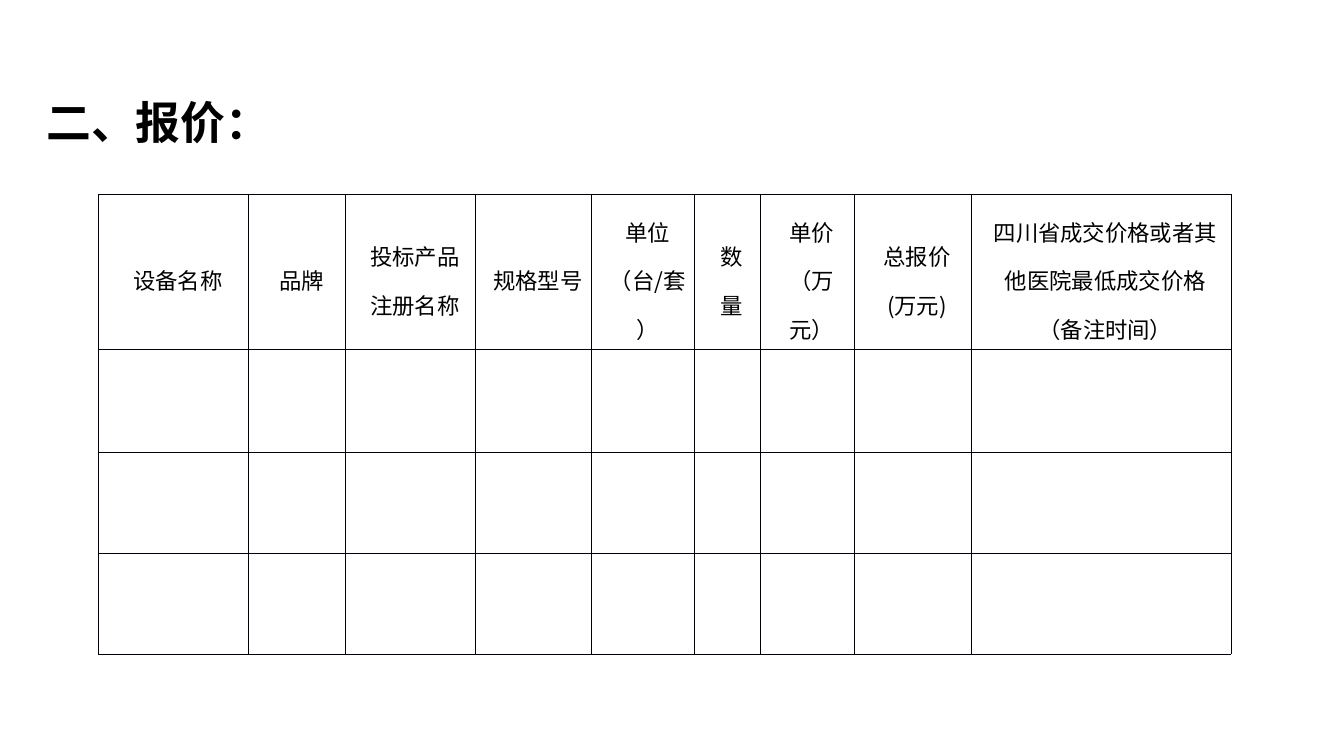
"""Build the quotation slide: a heading above an empty price table."""
import pptx
import pptx.util
import pptx.dml.color
import pptx.enum.text
import pptx.oxml
import pptx.oxml.ns
import lxml.etree

Inches, Pt = pptx.util.Inches, pptx.util.Pt
qn = pptx.oxml.ns.qn
BLACK = pptx.dml.color.RGBColor(0x00, 0x00, 0x00)
BORDER = pptx.dml.color.RGBColor(0x00, 0x00, 0x08)
FONT = "Noto Sans CJK SC"


def add_text(p, text, size, bold):
    r = p.add_run()
    r.text = text
    for name, value in {"name": FONT, "size": Pt(size), "bold": bold}.items():
        setattr(r.font, name, value)
    r.font.color.rgb = BLACK
    lxml.etree.SubElement(r.font._element, qn("a:ea"), typeface=FONT)


def add_borders(cell):
    tcPr = cell._tc.get_or_add_tcPr()
    for i, side in enumerate(("lnL", "lnR", "lnT", "lnB")):
        ln = lxml.etree.Element(qn(f"a:{side}"), w=str(Pt(0.5)))
        fill = lxml.etree.SubElement(ln, qn("a:solidFill"))
        lxml.etree.SubElement(fill, qn("a:srgbClr"), val=str(BORDER))
        tcPr.insert(i, ln)


prs = pptx.Presentation()
prs.slide_width, prs.slide_height = Inches(13.33), Inches(7.5)
s = prs.slides.add_slide(prs.slide_layouts[6])

sp = s.shapes.add_textbox(Inches(0.36), Inches(0.89), Inches(7.41), Inches(0.64))
tf = sp.text_frame
tf.word_wrap = True
tf.auto_size = pptx.enum.text.MSO_AUTO_SIZE.SHAPE_TO_FIT_TEXT
add_text(tf.paragraphs[0], "二、报价：", 32, True)

columns = [
    ("设备名称", 1.48),
    ("品牌", 0.97),
    ("投标产品注册名称", 1.28),
    ("规格型号", 1.16),
    ("单位（台/套）", 1.02),
    ("数量", 0.65),
    ("单价（万元）", 0.93),
    ("总报价(万元)", 1.16),
    ("四川省成交价格或者其他医院最低成交价格（备注时间）", 2.58),
]
heights = [1.54, 1.02, 1, 1]
cell_format = {
    "margin_left": Inches(0.07),
    "margin_right": Inches(0.07),
    "margin_top": 0,
    "margin_bottom": 0,
    "vertical_anchor": pptx.enum.text.MSO_ANCHOR.MIDDLE,
}

table = s.shapes.add_table(
    len(heights), len(columns), Inches(0.98), Inches(1.93),
    Inches(sum(width for _, width in columns)), Inches(sum(heights)),
).table
table.first_row = table.horz_banding = False
for row, height in zip(table.rows, heights):
    row.height = Inches(height)

for cell in table.iter_cells():
    for name, value in cell_format.items():
        setattr(cell, name, value)
    cell.fill.background()
    add_borders(cell)

for i, (heading, width) in enumerate(columns):
    table.columns[i].width = Inches(width)
    p = table.cell(0, i).text_frame.paragraphs[0]
    p.alignment = pptx.enum.text.PP_ALIGN.CENTER
    p.line_spacing = 1.5
    pPr = p._p.get_or_add_pPr()
    pPr.set("marL", str(Inches(0.09)))
    pPr.set("indent", "0")
    add_text(p, heading, 16, False)

prs.save("out.pptx")
